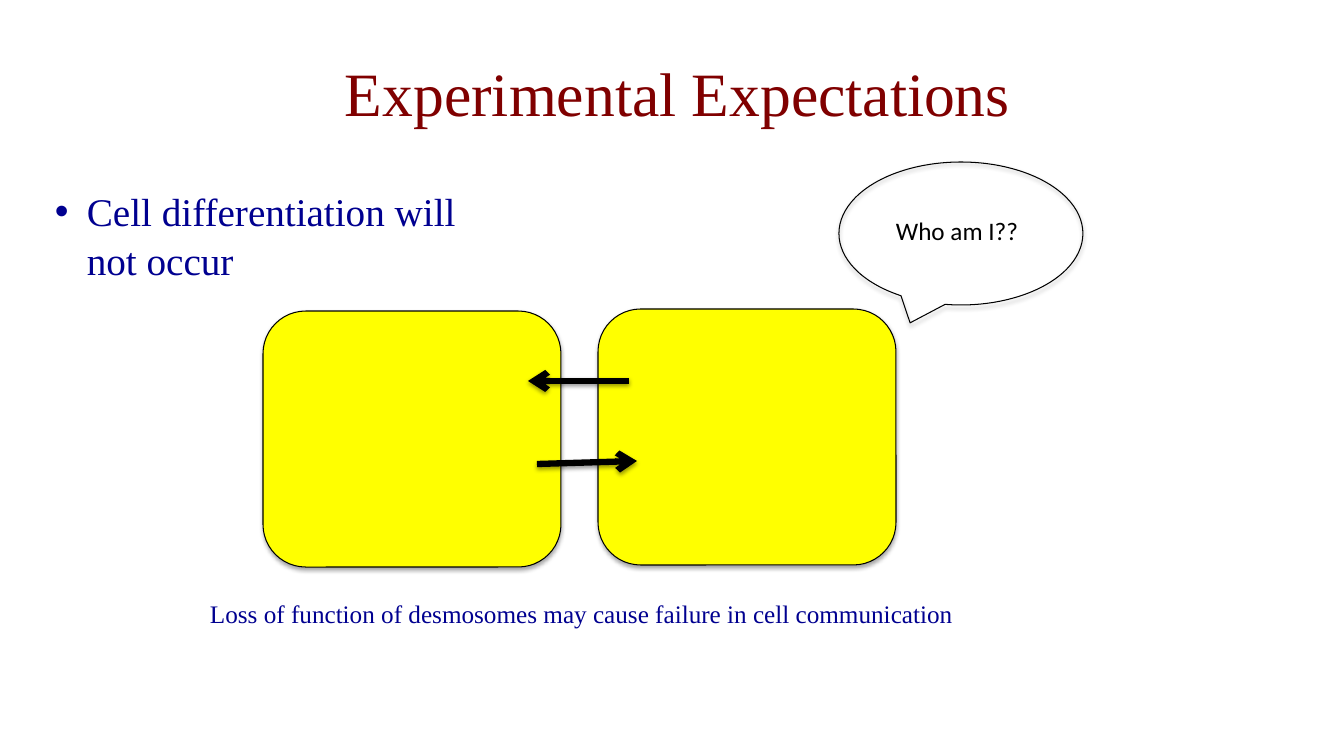
from lxml import etree
from pptx import Presentation
from pptx.dml.color import RGBColor
from pptx.enum.shapes import MSO_CONNECTOR, MSO_SHAPE as SHAPE
from pptx.enum.text import MSO_ANCHOR as ANCHOR, PP_ALIGN as ALIGN
from pptx.oxml import parse_xml
from pptx.oxml.ns import nsdecls, qn
from pptx.util import Pt

PX = 914400 / 100.8
MAROON = RGBColor(0x80, 0x00, 0x00)
NAVY = RGBColor(0x00, 0x00, 0x90)
YELLOW = RGBColor(0xFF, 0xFF, 0x00)
BLACK = RGBColor(0x00, 0x00, 0x00)
SERIF, SANS = "Times New Roman", "Calibri"

# text, box (left, top, width, height), font, size, colour
TITLE = ("Experimental Expectations", (73, 29, 1210, 126), SERIF, 44, MAROON)
BULLET = ("Cell differentiation will not occur", (45, 180, 437, 201), SERIF, 28, NAVY)
CAPTION = ("Loss of function of desmosomes may cause failure in cell communication",
           (200, 593, 1009, 40), SERIF, 18, NAVY)
QUESTION = ("Who am I??", (886, 210, 155, 40), SANS, 18, BLACK)

CELLS = [(263, 311, 298, 256), (598, 309, 298, 256)]
SIGNALS = [(629, 381, 528, 381), (537, 464, 637, 461)]  # from x, y to x, y
SPEECH = (839, 162, 244, 143)


def px(*lengths):
    return [round(n * PX) for n in lengths]


def add_shadow(s, opacity, distance):
    """Give a shape or connector a soft shadow that falls straight down."""
    sp_pr = s._element.spPr
    for old in sp_pr.findall(qn("a:effectLst")):
        sp_pr.remove(old)
    sp_pr.append(parse_xml(
        f'<a:effectLst {nsdecls("a")}><a:outerShdw blurRad="{Pt(3.1)}" dist="{Pt(distance)}" '
        f'dir="5400000" rotWithShape="0"><a:srgbClr val="{BLACK}">'
        f'<a:alpha val="{opacity * 1000}"/></a:srgbClr></a:outerShdw></a:effectLst>'))


def add_text(slide, text, box, font, size, color):
    tf = slide.shapes.add_textbox(*px(*box)).text_frame
    tf.word_wrap = True
    tf.text = text
    r = tf.paragraphs[0].runs[0]
    r.font.name, r.font.size, r.font.color.rgb = font, Pt(size), color
    return tf


def add_bullet(p, indent):
    p_pr = p._p.get_or_add_pPr()
    p_pr.set("marL", str(indent))
    p_pr.set("indent", str(-indent))
    etree.SubElement(p_pr, qn("a:buFont"), typeface="Arial")
    etree.SubElement(p_pr, qn("a:buChar"), char="•")


def add_outlined(slide, kind, box, fill=None):
    s = slide.shapes.add_shape(kind, *px(*box))
    if fill is None:
        s.fill.background()
    else:
        s.fill.solid()
        s.fill.fore_color.rgb = fill
    s.line.color.rgb, s.line.width = BLACK, Pt(0.75)
    add_shadow(s, 35, 1.8)


def add_arrow(slide, ends):
    s = slide.shapes.add_connector(MSO_CONNECTOR.STRAIGHT, *px(*ends))
    s.line.color.rgb, s.line.width = BLACK, Pt(4.5)
    etree.SubElement(s.line._get_or_add_ln(), qn("a:tailEnd"), type="arrow")
    add_shadow(s, 38, 1.6)


def main():
    prs = Presentation()
    prs.slide_width, prs.slide_height = px(1344, 756)
    slide = prs.slides.add_slide(prs.slide_layouts[6])

    title = add_text(slide, *TITLE)
    title.vertical_anchor = ANCHOR.MIDDLE
    title.paragraphs[0].alignment = ALIGN.CENTER

    p = add_text(slide, *BULLET).paragraphs[0]
    p.line_spacing, p.space_before = 1.05, Pt(2)
    add_bullet(p, *px(32))

    add_text(slide, *CAPTION)
    for box in CELLS:
        add_outlined(slide, SHAPE.ROUNDED_RECTANGLE, box, YELLOW)
    for ends in SIGNALS:
        add_arrow(slide, ends)
    add_outlined(slide, SHAPE.OVAL_CALLOUT, SPEECH)
    add_text(slide, *QUESTION)
    prs.save("out.pptx")


if __name__ == "__main__":
    main()
